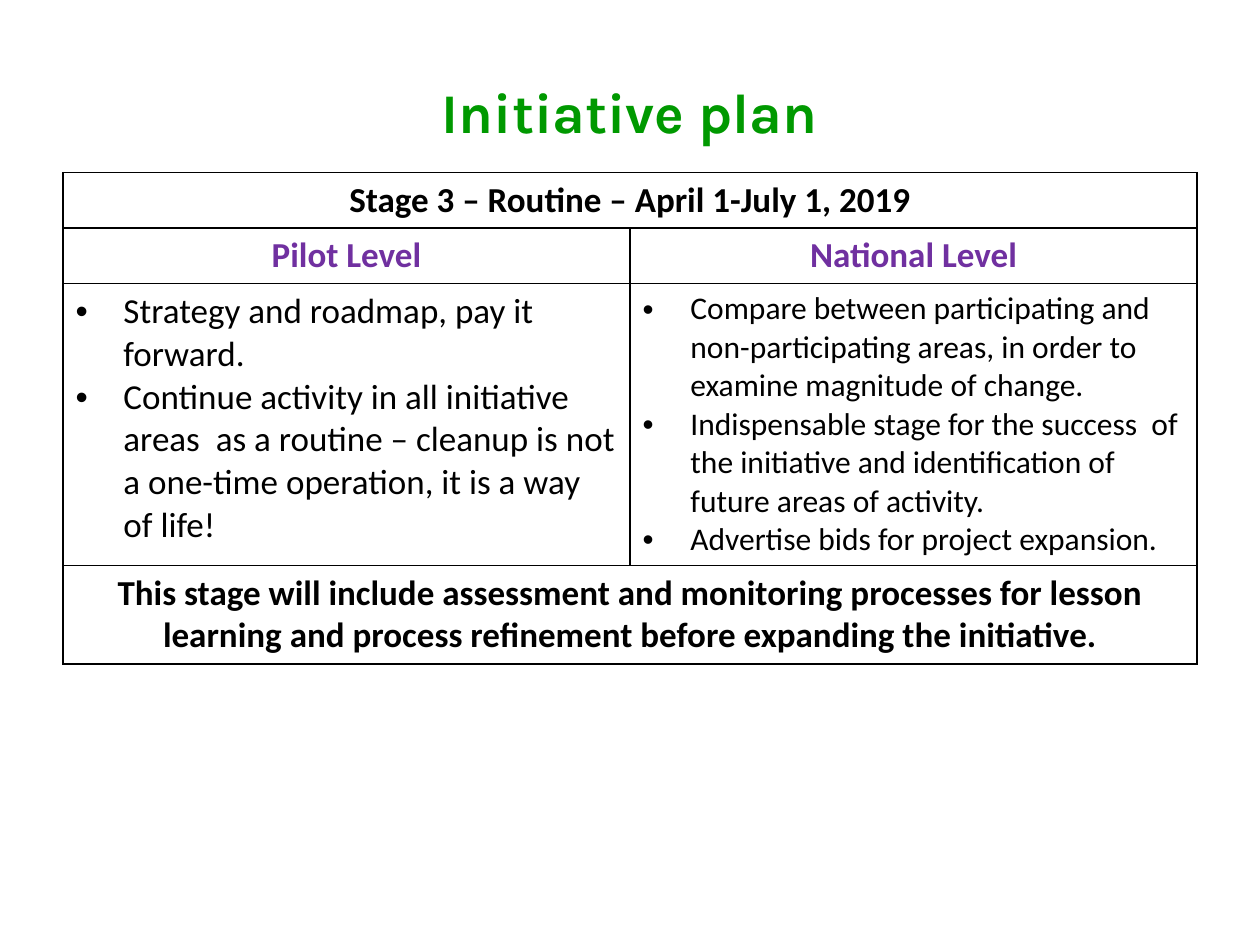
from pptx import Presentation
from pptx.dml.color import RGBColor
from pptx.enum import text
from pptx.oxml import parse_xml
from pptx.oxml.ns import nsdecls
from pptx.util import Inches, Pt

GREEN = RGBColor(0x00, 0x99, 0x00)
PURPLE = RGBColor(0x70, 0x30, 0xA0)
BLACK = RGBColor(0x00, 0x00, 0x00)

ROW_HEIGHTS = [0.44, 0.44, 2.23, 0.78]
COLUMN_WIDTH = 4.5
BULLET_INDENT = 0.38

STAGE = "Stage 3 – Routine – April 1-July 1, 2019"
PILOT_ITEMS = [
    "Strategy and roadmap, pay it forward.",
    "Continue activity in all initiative areas  as a routine – cleanup is not "
    "a one-time operation, it is a way of life!",
]
NATIONAL_ITEMS = [
    "Compare between participating and non-participating areas, in order to "
    "examine magnitude of change.",
    "Indispensable stage for the success  of the initiative and identification "
    "of future areas of activity.",
    "Advertise bids for project expansion.",
]
SUMMARY = (
    "This stage will include assessment and monitoring processes for lesson "
    "learning and process refinement before expanding the initiative."
)


def format_runs(paragraph, font_name, size, color, bold):
    for run in paragraph.runs:
        run.font.name = font_name
        run.font.size = Pt(size)
        run.font.color.rgb = color
        run.font.bold = bold


def add_title(slide, title_text):
    title = slide.shapes.title
    title.left, title.top = Inches(0.5), Inches(0.26)
    title.width, title.height = Inches(9), Inches(1.25)
    title.text_frame.text = title_text
    title.text_frame.vertical_anchor = text.MSO_ANCHOR.MIDDLE
    paragraph = title.text_frame.paragraphs[0]
    paragraph.alignment = text.PP_ALIGN.CENTER
    format_runs(paragraph, "Karla", 32, GREEN, True)


def style_cell(cell):
    """Give the cell thin black borders and no fill."""
    properties = cell._tc.get_or_add_tcPr()
    for side in ("lnL", "lnR", "lnT", "lnB"):
        properties.append(parse_xml(
            f'<a:{side} {nsdecls("a")} w="{Pt(1)}"><a:solidFill>'
            f'<a:srgbClr val="{BLACK}"/></a:solidFill></a:{side}>'
        ))
    cell.fill.background()


def add_table(slide):
    frame = slide.shapes.add_table(
        len(ROW_HEIGHTS), 2, Inches(0.5), Inches(1.37),
        Inches(2 * COLUMN_WIDTH), Inches(sum(ROW_HEIGHTS)),
    )
    table = frame.table
    table.first_row = False
    table.horz_banding = False
    for row, height in zip(table.rows, ROW_HEIGHTS):
        row.height = Inches(height)
    for column in table.columns:
        column.width = Inches(COLUMN_WIDTH)
    for cell in table.iter_cells():
        style_cell(cell)
    for row in (0, len(ROW_HEIGHTS) - 1):
        table.cell(row, 0).merge(table.cell(row, 1))
    return table


def write_heading(cell, heading, color=BLACK):
    cell.text_frame.text = heading
    paragraph = cell.text_frame.paragraphs[0]
    paragraph.alignment = text.PP_ALIGN.CENTER
    format_runs(paragraph, "Calibri", 20, color, True)


def write_bullets(cell, items, size):
    cell.text_frame.text = "\n".join(items)
    for paragraph in cell.text_frame.paragraphs:
        properties = paragraph._p.get_or_add_pPr()
        properties.set("marL", str(Inches(BULLET_INDENT)))
        properties.set("indent", str(-Inches(BULLET_INDENT)))
        properties.append(parse_xml(f'<a:buFont {nsdecls("a")} typeface="Arial"/>'))
        properties.append(parse_xml(f'<a:buChar {nsdecls("a")} char="•"/>'))
        format_runs(paragraph, "Calibri", size, BLACK, False)


def main():
    presentation = Presentation()
    presentation.slide_width = Inches(10)
    presentation.slide_height = Inches(7.5)
    slide = presentation.slides.add_slide(presentation.slide_layouts[5])

    add_title(slide, "Initiative plan")
    table = add_table(slide)
    write_heading(table.cell(0, 0), STAGE)
    write_heading(table.cell(1, 0), "Pilot Level", PURPLE)
    write_heading(table.cell(1, 1), "National Level", PURPLE)
    write_bullets(table.cell(2, 0), PILOT_ITEMS, 20)
    write_bullets(table.cell(2, 1), NATIONAL_ITEMS, 18)
    write_heading(table.cell(3, 0), SUMMARY)

    presentation.save("out.pptx")


if __name__ == "__main__":
    main()
